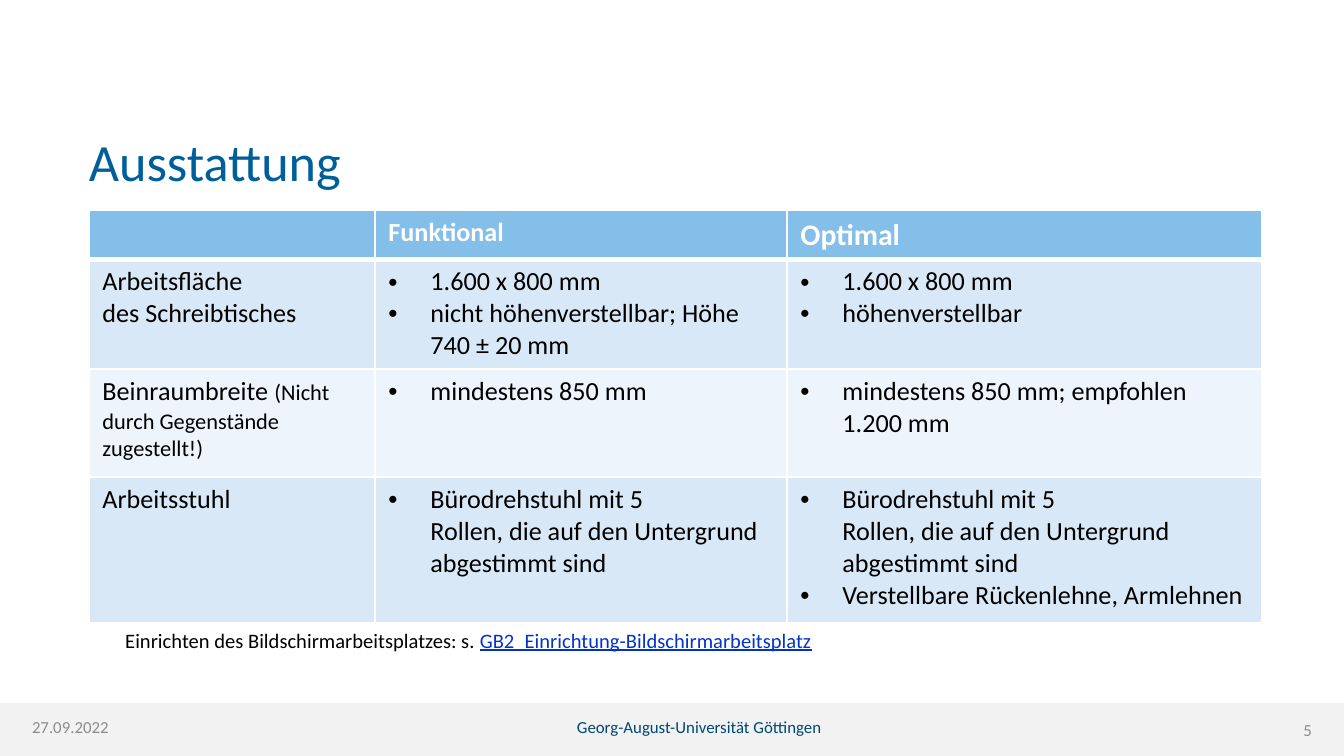
import pptx
import pptx.dml.color
import pptx.enum.shapes
import pptx.enum.text
import pptx.oxml.ns
import pptx.util
from lxml import etree

PX = 914400 / 134.4
FONT = "Calibri"
COLORS = {
    "title": "005F9B", "university": "004774", "muted": "8C8C8C", "band": "F2F2F2",
    "header": "84BFEA", "odd": "D9E8F7", "even": "EDF4FB",
    "white": "FFFFFF", "black": "000000", "link": "0033CC",
}
ALIGN = pptx.enum.text.PP_ALIGN

LABELS = [
    ("Ausstattung", (89, 129, 1121, 63), 28, "title", ALIGN.LEFT),
    ("Georg-August-Universität Göttingen", (254, 717, 890, 21), 9, "university", ALIGN.CENTER),
    ("27.09.2022", (32, 717, 152, 21), 9, "muted", ALIGN.LEFT),
    ("5", (1223, 720, 89, 19), 9, "muted", ALIGN.RIGHT),
]
BAND = (0, 703, 1344, 53)

HEADERS = [("", 14), ("Funktional", 14), ("Optimal", 16)]
CHAIR = "Bürodrehstuhl mit 5\nRollen, die auf den Untergrund abgestimmt sind"
EQUIPMENT = [
    ("Arbeitsfläche\ndes Schreibtisches", "",
     ["1.600 x 800 mm", "nicht höhenverstellbar; Höhe 740 ± 20 mm"],
     ["1.600 x 800 mm", "höhenverstellbar"]),
    ("Beinraumbreite ", "(Nicht durch Gegenstände zugestellt!)",
     ["mindestens 850 mm"],
     ["mindestens 850 mm; empfohlen 1.200 mm"]),
    ("Arbeitsstuhl", "",
     [CHAIR],
     [CHAIR, "Verstellbare Rückenlehne, Armlehnen"]),
]
TABLE_CORNER = (89, 210)
COLUMN_WIDTHS = [286, 412, 475]
ROW_HEIGHTS = [49, 110, 108, 146]
INDENT = 42

FOOTNOTE = ("Einrichten des Bildschirmarbeitsplatzes: s. ", "GB2_Einrichtung-Bildschirmarbeitsplatz")
FOOTNOTE_BOX = (112, 621, 831, 39)


def emu(length):
    return pptx.util.Emu(round(length * PX))


def rgb(name):
    return pptx.dml.color.RGBColor.from_string(COLORS[name])


def style(font, size, color, bold=False):
    font.name = FONT
    font.size = pptx.util.Pt(size)
    font.bold = bold
    font.color.rgb = rgb(color)


def add_text_box(slide, box, inset=True):
    frame = slide.shapes.add_textbox(*map(emu, box)).text_frame
    frame.word_wrap = True
    if not inset:
        frame.margin_left = frame.margin_top = frame.margin_right = frame.margin_bottom = 0
    return frame


def add_bullet(paragraph):
    properties = paragraph._p.get_or_add_pPr()
    properties.set("marL", str(emu(INDENT)))
    properties.set("indent", str(-emu(INDENT)))
    etree.SubElement(properties, pptx.oxml.ns.qn("a:buFont")).set("typeface", "Arial")
    etree.SubElement(properties, pptx.oxml.ns.qn("a:buChar")).set("char", "•")


def add_borders(cell, widths):
    properties = cell._tc.get_or_add_tcPr()
    for position, (side, width) in enumerate(widths.items()):
        line = etree.Element(pptx.oxml.ns.qn(f"a:ln{side}"), w=str(pptx.util.Pt(width)))
        fill = etree.SubElement(line, pptx.oxml.ns.qn("a:solidFill"))
        etree.SubElement(fill, pptx.oxml.ns.qn("a:srgbClr")).set("val", COLORS["white"])
        properties.insert(position, line)


def fill_equipment_row(table, row, item, note, functional, optimal):
    label = table.cell(row, 0).text_frame.paragraphs[0]
    label.text = item
    style(label.font, 14, "black")
    if note:
        note_run = label.add_run()
        note_run.text = note
        note_run.font.size = pptx.util.Pt(12)
    for column, requirements in enumerate((functional, optimal), 1):
        frame = table.cell(row, column).text_frame
        for index, requirement in enumerate(requirements):
            paragraph = frame.add_paragraph() if index else frame.paragraphs[0]
            paragraph.text = requirement
            add_bullet(paragraph)
            style(paragraph.font, 14, "black")


def add_equipment_table(slide):
    table = slide.shapes.add_table(
        len(ROW_HEIGHTS), len(COLUMN_WIDTHS), *map(emu, TABLE_CORNER),
        emu(sum(COLUMN_WIDTHS)), emu(sum(ROW_HEIGHTS))).table
    for column, width in zip(table.columns, COLUMN_WIDTHS):
        column.width = emu(width)
    for row, height in zip(table.rows, ROW_HEIGHTS):
        row.height = emu(height)
    for column, (heading, size) in enumerate(HEADERS):
        paragraph = table.cell(0, column).text_frame.paragraphs[0]
        paragraph.text = heading
        style(paragraph.font, size, "white", bold=True)
    for row, equipment in enumerate(EQUIPMENT, 1):
        fill_equipment_row(table, row, *equipment)
    for row in range(len(ROW_HEIGHTS)):
        shade = "header" if row == 0 else "odd" if row % 2 else "even"
        widths = {"L": 1, "R": 1, "T": 3 if row == 1 else 1, "B": 3 if row == 0 else 1}
        for column in range(len(COLUMN_WIDTHS)):
            cell = table.cell(row, column)
            cell.fill.solid()
            cell.fill.fore_color.rgb = rgb(shade)
            add_borders(cell, widths)


def main():
    presentation = pptx.Presentation()
    presentation.slide_width = emu(1344)
    presentation.slide_height = emu(756)
    slide = presentation.slides.add_slide(presentation.slide_layouts[6])

    band = slide.shapes.add_shape(pptx.enum.shapes.MSO_SHAPE.RECTANGLE, *map(emu, BAND))
    band.shadow.inherit = False
    band.fill.solid()
    band.fill.fore_color.rgb = rgb("band")
    band.line.fill.background()

    for text, box, size, color, alignment in LABELS:
        paragraph = add_text_box(slide, box, inset=False).paragraphs[0]
        paragraph.text = text
        paragraph.alignment = alignment
        style(paragraph.font, size, color)

    add_equipment_table(slide)

    footnote = add_text_box(slide, FOOTNOTE_BOX).paragraphs[0]
    for text, color in zip(FOOTNOTE, ("black", "link")):
        run = footnote.add_run()
        run.text = text
        style(run.font, 11, color)
        run.font.underline = color == "link"

    presentation.save("out.pptx")


if __name__ == "__main__":
    main()
